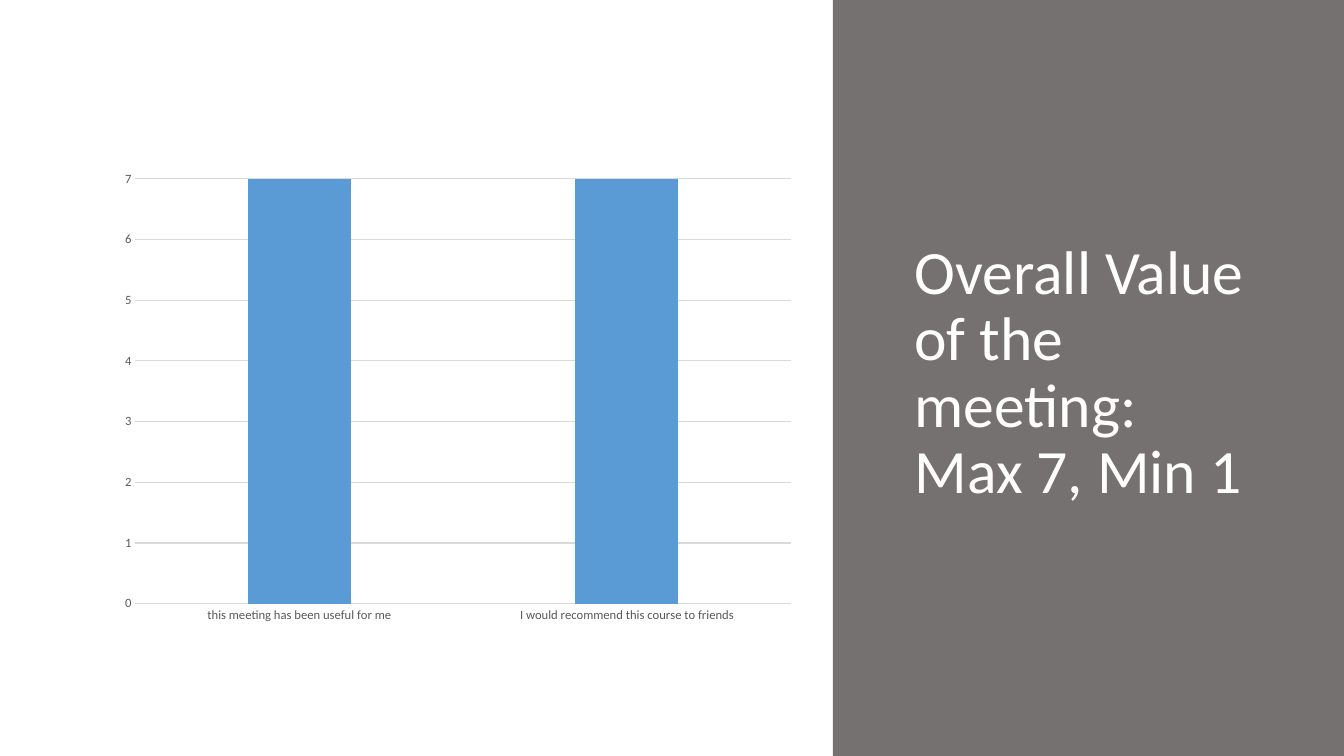
from lxml.etree import SubElement
from pptx import Presentation
from pptx.chart.data import CategoryChartData
from pptx.dml.color import RGBColor
from pptx.enum.chart import XL_CHART_TYPE, XL_TICK_MARK
from pptx.enum.shapes import MSO_SHAPE
from pptx.enum.text import MSO_ANCHOR, PP_ALIGN
from pptx.oxml.ns import qn
from pptx.util import Inches, Pt

WHITE = RGBColor(0xFF, 0xFF, 0xFF)
GRAY = RGBColor(0x76, 0x71, 0x71)
BLUE = RGBColor(0x5B, 0x9B, 0xD5)
LABEL = RGBColor(0x59, 0x59, 0x59)
RULE = RGBColor(0xD9, 0xD9, 0xD9)
FONT = "Calibri"

deck = Presentation()
deck.slide_width = Inches(13.33)
deck.slide_height = Inches(7.5)
slide = deck.slides.add_slide(deck.slide_layouts[5])

panel_width = Inches(5.07)
side_panel = slide.shapes.add_shape(
    MSO_SHAPE.RECTANGLE, deck.slide_width - panel_width, 0, panel_width, deck.slide_height)
side_panel.shadow.inherit = False
side_panel.fill.solid()
side_panel.fill.fore_color.rgb = GRAY
side_panel.line.fill.background()

heading = slide.shapes.title
heading.element.addprevious(side_panel.element)
heading.left, heading.top = Inches(8.97), Inches(0.7)
heading.width, heading.height = Inches(4.01), Inches(6.02)
heading.text_frame.text = "Overall Value of the meeting: \vMax 7, Min 1"
heading.text_frame.word_wrap = True
heading.text_frame.vertical_anchor = MSO_ANCHOR.MIDDLE
heading_line = heading.text_frame.paragraphs[0]
heading_line.alignment = PP_ALIGN.LEFT
heading_line.line_spacing = 0.9
for run in heading_line.runs:
    run.font.name = FONT
    run.font.size = Pt(44)
    run.font.color.rgb = WHITE

ratings = CategoryChartData()
ratings.categories = ["this meeting has been useful for me",
                      "I would recommend this course to friends"]
ratings.add_series("Series 1", [7, 7])
chart = slide.shapes.add_chart(
    XL_CHART_TYPE.COLUMN_CLUSTERED,
    Inches(1.07), Inches(1.58), Inches(6.84), Inches(4.9), ratings).chart
chart.has_legend = False
chart.has_title = False
chart.font.name = FONT
chart.font.size = Pt(10)

columns = chart.plots[0]
columns.vary_by_categories = False
columns.gap_width = 219
columns.overlap = -27
columns.series[0].format.fill.solid()
columns.series[0].format.fill.fore_color.rgb = BLUE

for axis in (chart.category_axis, chart.value_axis):
    axis.major_tick_mark = XL_TICK_MARK.NONE
    axis.minor_tick_mark = XL_TICK_MARK.NONE
    axis.tick_labels.font.name = FONT
    axis.tick_labels.font.size = Pt(9)
    axis.tick_labels.font.color.rgb = LABEL

scores = chart.value_axis
scores.minimum_scale = 0
scores.maximum_scale = 7
scores.major_unit = 1
scores.tick_labels.number_format = "General"
scores.tick_labels.number_format_is_linked = False
scores.format.line.fill.background()
for rule in (chart.category_axis.format.line, scores.major_gridlines.format.line):
    rule.color.rgb = RULE
    rule.width = Pt(0.75)

plot_area = columns._element.getparent()
for old_layout in plot_area.findall(qn("c:layout")):
    plot_area.remove(old_layout)
layout = SubElement(plot_area, qn("c:layout"))
plot_area.insert(0, layout)
manual = SubElement(layout, qn("c:manualLayout"))
for tag, value in (("layoutTarget", "inner"), ("xMode", "edge"), ("yMode", "edge"),
                   ("x", "0.04"), ("y", "0.04"), ("w", "0.95"), ("h", "0.86")):
    SubElement(manual, qn(f"c:{tag}")).set("val", value)

deck.save("out.pptx")
